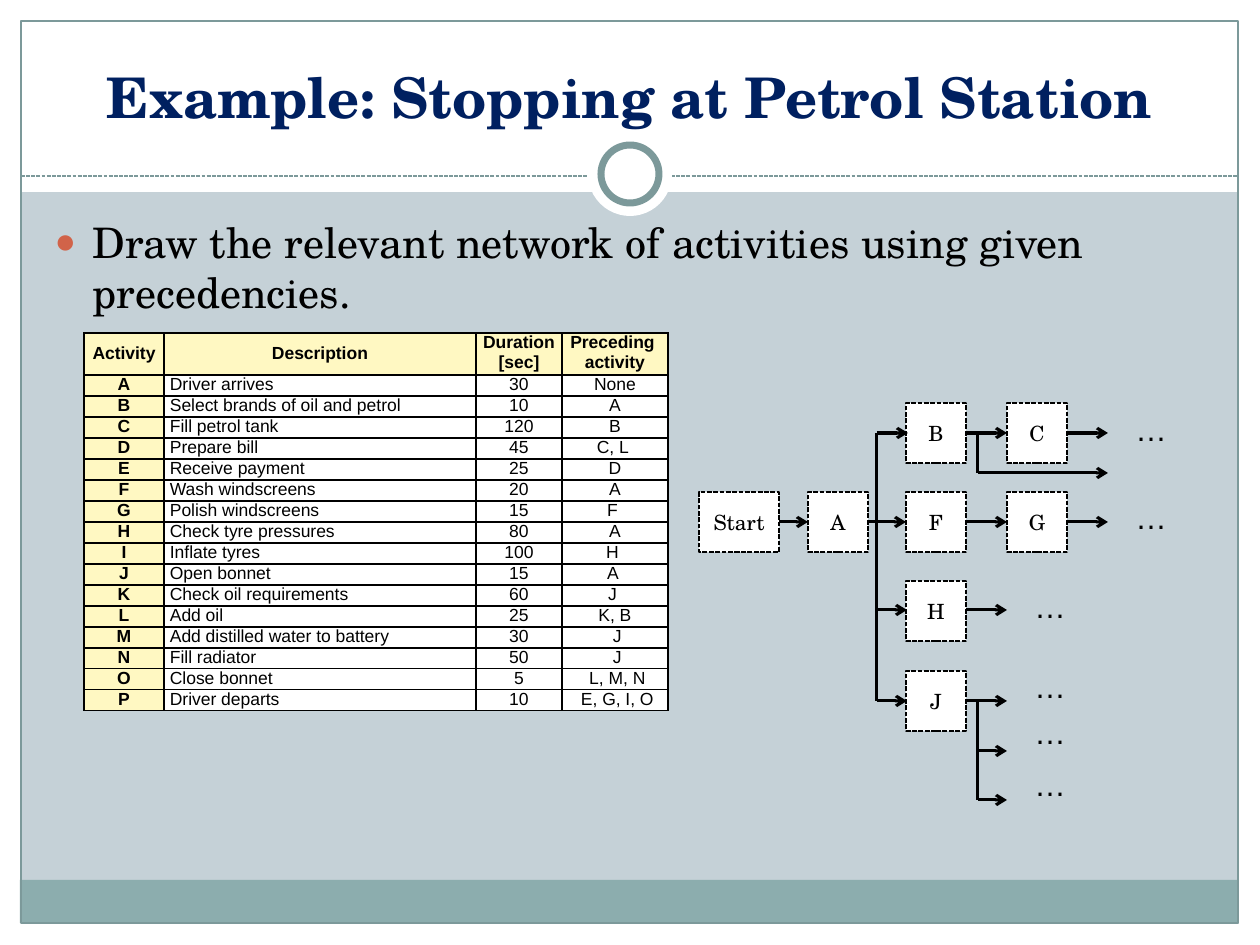
from lxml import etree
from pptx import Presentation, util as u
from pptx.dml.color import RGBColor
from pptx.enum import dml, shapes, text
from pptx.oxml import parse_xml
from pptx.oxml.ns import nsdecls, qn

PX = 7257  # EMU in one px, 126 px to the inch
SERIF, SANS = "TeX Gyre Schola", "Arial"
RECT, OVAL = shapes.MSO_SHAPE.RECTANGLE, shapes.MSO_SHAPE.OVAL
LINE = shapes.MSO_CONNECTOR.STRAIGHT
DASH = dml.MSO_LINE.SQUARE_DOT
MID, LEFT = text.PP_ALIGN.CENTER, text.PP_ALIGN.LEFT
hue = RGBColor.from_string

deck = Presentation()
deck.slide_width, deck.slide_height = u.Inches(10), u.Inches(7.5)
slide = deck.slides.add_slide(deck.slide_layouts[1])
slide.background.fill.solid()
slide.background.fill.fore_color.rgb = hue("C5D1D7")


def write(frame, words, size, face=SERIF, bold=False, ink="000000", align=MID):
    frame.text = words
    for para in frame.paragraphs:
        para.alignment = align
        para.font.color.rgb = hue(ink)
        for key, val in {"size": u.Pt(size), "name": face, "bold": bold}.items():
            setattr(para.font, key, val)


def draw(kind, box, fill=None, line=None, width=0.75, dash=None, head=False):
    """Box is left, top, width, height; for a line it is x1, y1, x2, y2."""
    place = [v * PX for v in box]
    if kind is LINE:  # by identity: the two enums share numbers
        item = slide.shapes.add_connector(kind, *place)
        etree.SubElement(item._element.spPr, qn("a:effectLst"))
    else:
        item = slide.shapes.add_shape(kind, *place)
        item.shadow.inherit = False
        item.fill.background()
        if fill:
            item.fill.solid()
            item.fill.fore_color.rgb = hue(fill)
    if line:
        item.line.color.rgb = hue(line)
        item.line.width = u.Pt(width)
        item.line.dash_style = dash
    else:
        item.line.fill.background()
    if head:
        etree.SubElement(item._element.spPr.find(qn("a:ln")), qn("a:tailEnd"), type="arrow")
    return item


# Frame of the slide
for box in ((0, 924, 1260, 21), (0, 0, 1260, 192), (0, 0, 21, 945), (1239, 0, 21, 945)):
    draw(RECT, box, "FFFFFF")
draw(RECT, (20, 880, 1218, 43), "8CADAE")
draw(RECT, (21, 21, 1217, 902), line="7C999A")
draw(LINE, (21, 176, 1238, 176), line="7C999A", dash=DASH)
draw(OVAL, (588, 132, 84, 84), "FFFFFF")
draw(OVAL, (601, 145, 58, 58), "FFFFFF", "7C999A", 4)

# Title and body, lifted above the frame
title, body = slide.placeholders
for item, box in ((title, (42, 32, 1176, 104)), (body, (42, 210, 1179, 630))):
    for key, val in zip(("left", "top", "width", "height"), box):
        setattr(item, key, val * PX)
    slide.shapes._spTree.append(item._element)
write(title.text_frame, "Example: Stopping at Petrol Station", 32, bold=True, ink="002060")
title.text_frame.vertical_anchor = text.MSO_ANCHOR.BOTTOM
write(body.text_frame,
      "Draw the relevant network of activities using given precedencies.", 24, align=LEFT)
props = body.text_frame.paragraphs[0]._p.get_or_add_pPr()
props.set("marL", str(38 * PX))
props.set("indent", str(-38 * PX))
mark = (f'<a:buClr {nsdecls("a")}><a:srgbClr val="D16349"/></a:buClr>',
        f'<a:buSzPct {nsdecls("a")} val="85000"/>',
        f'<a:buChar {nsdecls("a")} char="●"/>')
for spot, xml in enumerate(mark):
    props.insert(spot, parse_xml(xml))

# Table of activities
rows = [("Activity", "Description", "Duration [sec]", "Preceding \nactivity")]
jobs = """Driver arrives|30|None
Select brands of oil and petrol|10|A
Fill petrol tank|120|B
Prepare bill|45|C, L 
Receive payment|25|D
Wash windscreens|20|A
Polish windscreens|15|F 
Check tyre pressures|80|A
Inflate tyres|100|H 
Open bonnet|15|A 
Check oil requirements|60|J 
Add oil|25|K, B
Add distilled water to battery|30| J
Fill radiator|50| J
Close bonnet|5| L, M, N
Driver departs|10| E, G, I, O"""
for name, job in zip("ABCDEFGHIJKLMNOP", jobs.split("\n")):
    rows.append((name, *job.split("|")))

grid = slide.shapes.add_table(len(rows), 4, 84 * PX, 333 * PX, 584 * PX, 378 * PX).table
for col, wide in zip(grid.columns, (80, 312, 86, 106)):
    col.width = wide * PX
for r, row in enumerate(rows):
    grid.rows[r].height = (21 if r else 42) * PX
    for c, words in enumerate(row):
        cell = grid.cell(r, c)
        main = r == 0 or c == 0
        write(cell.text_frame, words, 10, SANS, main, align=LEFT if r and c == 1 else MID)
        form = {"margin_left": 6 * PX, "margin_right": 6 * PX,
                "margin_top": 0, "margin_bottom": 0}
        if r == 0 and c < 2:
            form["vertical_anchor"] = text.MSO_ANCHOR.MIDDLE
        for key, val in form.items():
            setattr(cell, key, val)
        cell.fill.solid()
        cell.fill.fore_color.rgb = hue("FFF8C2" if main else "FFFFFF")
        for n, side in enumerate("LRTB"):
            cell._tc.get_or_add_tcPr().insert(n, parse_xml(
                f'<a:ln{side} {nsdecls("a")} w="12700"><a:solidFill>'
                f'<a:srgbClr val="000000"/></a:solidFill></a:ln{side}>'))

# Network boxes
nodes = {"Start": (699, 492), "A": (808, 492), "B": (906, 403), "F": (906, 492),
         "H": (906, 581), "J": (906, 671), "C": (1007, 403), "G": (1007, 492)}
for name, (x, y) in nodes.items():
    wide = 80 if name == "Start" else 60
    node = draw(RECT, (x, y, wide, 60), "FFFFFF", "000000", 0.9, DASH)
    write(node.text_frame, name, 12)
    node.text_frame.margin_left = node.text_frame.margin_right = 0

# Arrows: start, end, height
for x, end, y in ((779, 808, 522), (868, 906, 522), (966, 1007, 522), (1067, 1108, 522),
                  (966, 1007, 433), (1067, 1108, 433), (966, 1007, 610), (966, 1007, 701),
                  (877, 908, 433), (877, 907, 610), (877, 907, 701),
                  (978, 1108, 473), (978, 1007, 751), (978, 1007, 800)):
    draw(LINE, (x, y, end, y), line="000000", width=1.75, head=True)

# Upright branches
for x, y, end in ((877, 433, 701), (978, 433, 473), (978, 701, 800)):
    draw(LINE, (x, y, x, end), line="000000", width=1.75)

# Open ends
for x, y in ((1123, 404), (1123, 492), (1022, 581), (1022, 661), (1022, 707), (1022, 759)):
    note = slide.shapes.add_textbox(x * PX, y * PX, 57 * PX, 50 * PX)
    note.text_frame.word_wrap = False
    write(note.text_frame, "…", 18, SANS, align=LEFT)

deck.save("out.pptx")
